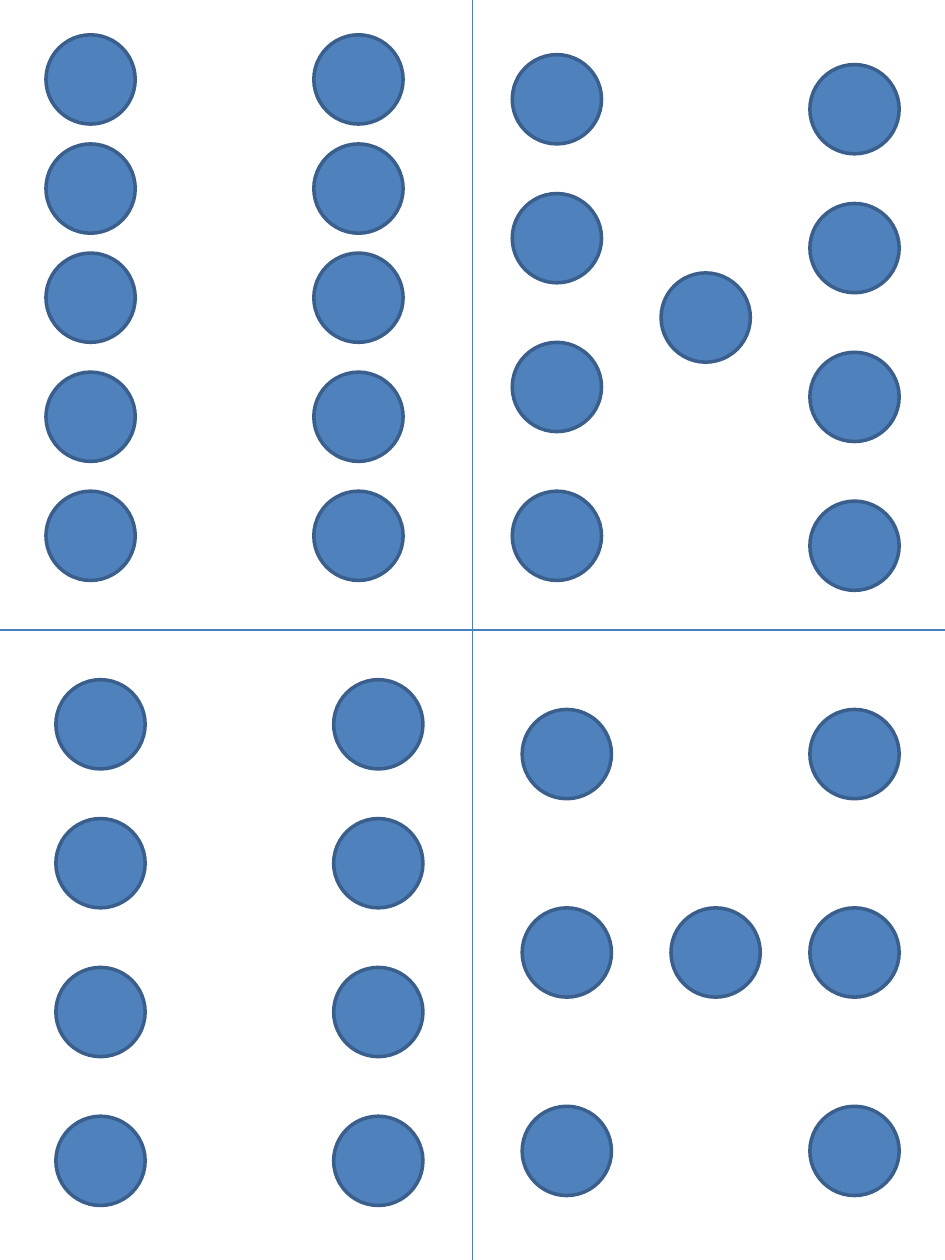
from itertools import product

from pptx import Presentation
from pptx.dml.color import RGBColor
from pptx.enum.shapes import MSO_CONNECTOR, MSO_SHAPE
from pptx.oxml.ns import qn
from pptx.util import Cm, Inches, Pt

OVAL = MSO_SHAPE.OVAL
LINE = MSO_CONNECTOR.STRAIGHT

CELL = Cm(0.2)
LEFT, TOP = Inches(0.05), Inches(0.04)
DOT = 9  # cells across one dot

COLORS = {"dot": "4F81BD", "edge": "3A5F8C", "rule": "4B7EBC"}

# Each group of dots fills every crossing of its grid columns and rows.
GROUPS = [
    ((4, 31), (3, 14, 25, 37, 49)),  # ten
    ((81,), (6, 20, 35, 50)),        # nine
    ((51,), (5, 19, 34, 49)),
    ((66,), (27,)),
    ((5, 33), (68, 82, 97, 112)),    # eight
    ((52, 81), (71, 91, 111)),       # seven
    ((67,), (91,)),
]


class Board:
    """Holds the slide and the style of its dots and rules."""

    def __init__(self, deck):
        self.wide, self.high = deck.slide_width, deck.slide_height
        self.slide = deck.slides.add_slide(deck.slide_layouts[6])
        self.forms = {
            "edge": {"width": Pt(2)},
            "rule": {"width": Pt(0.75)},
        }

    def color(self, name):
        return RGBColor.from_string(COLORS[name])

    def stroke(self, line, name):
        line.color.rgb = self.color(name)
        for key, value in self.forms[name].items():
            setattr(line, key, value)

    def rule(self, x1, y1, x2, y2):
        """Draw a line between points given as shares of the slide."""
        ends = [round(share * size) for share, size in zip(
            (x1, y1, x2, y2), (self.wide, self.high) * 2)]
        rule = self.slide.shapes.add_connector(LINE, *ends)
        self.stroke(rule.line, "rule")
        props = rule._element.spPr
        props.append(props.makeelement(qn("a:effectLst"), {}))

    def dot(self, col, row):
        side = DOT * CELL
        dot = self.slide.shapes.add_shape(
            OVAL, LEFT + col * CELL, TOP + row * CELL, side, side)
        dot.shadow.inherit = False
        dot.fill.solid()
        dot.fill.fore_color.rgb = self.color("dot")
        self.stroke(dot.line, "edge")


def main():
    deck = Presentation()
    deck.slide_width, deck.slide_height = Inches(7.5), Inches(10)
    board = Board(deck)
    board.rule(0.5, 0, 0.5, 1)
    board.rule(0, 0.5, 1, 0.5)
    for cols, rows in GROUPS:
        for col, row in product(cols, rows):
            board.dot(col, row)
    deck.save("out.pptx")


if __name__ == "__main__":
    main()
